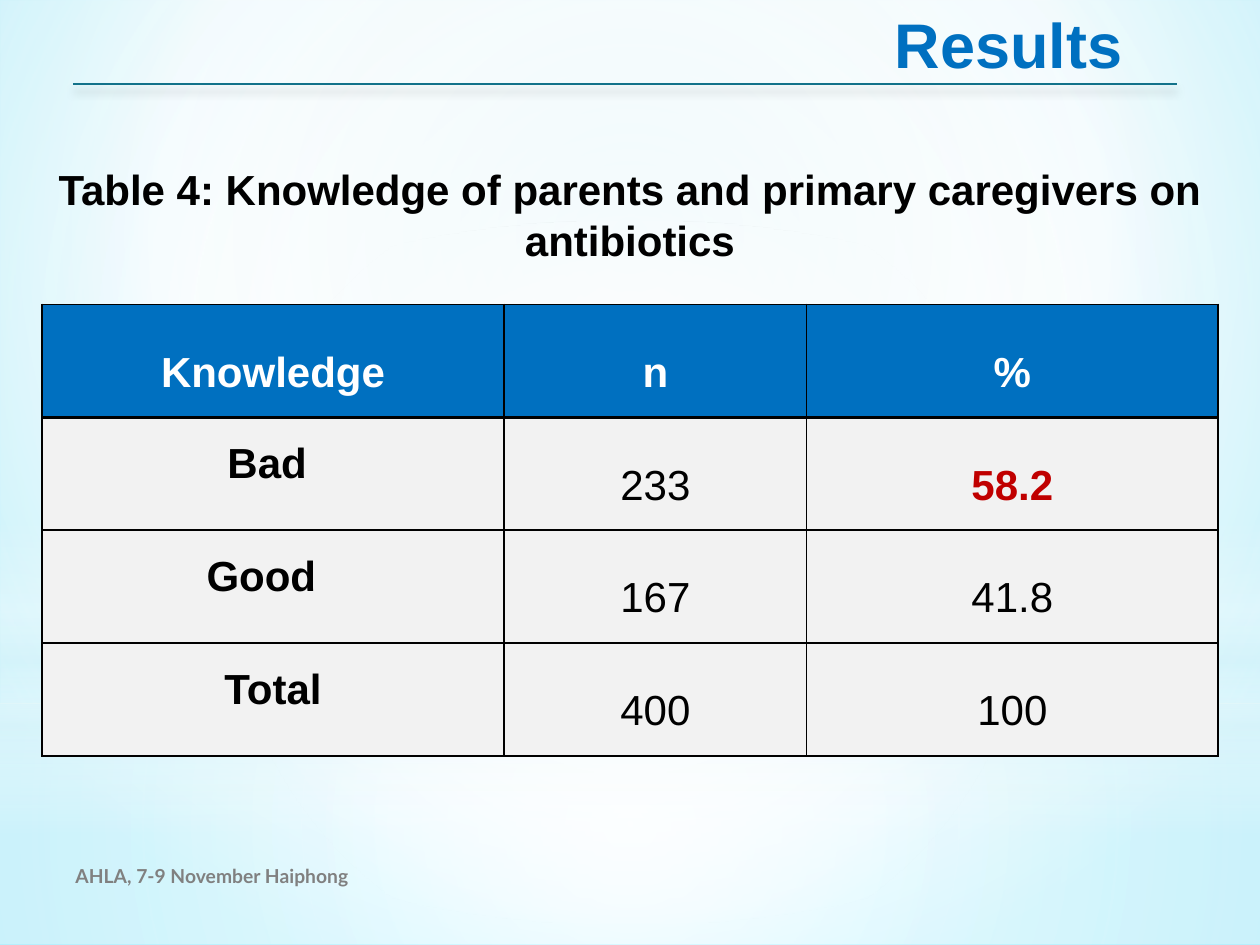
"""Build the results slide on knowledge of antibiotics."""
import pptx
import pptx.dml.color
import pptx.enum.shapes
import pptx.enum.text
import pptx.oxml
import pptx.oxml.ns
import pptx.util

Pt = pptx.util.Pt
RGB = pptx.dml.color.RGBColor
Shape = pptx.enum.shapes.MSO_SHAPE
Align = pptx.enum.text.PP_ALIGN
Anchor = pptx.enum.text.MSO_ANCHOR
qn = pptx.oxml.ns.qn
NS = pptx.oxml.ns.nsdecls("a")

BLUE = RGB(0x00, 0x70, 0xC0)
TEAL = RGB(0x12, 0x72, 0x8A)
RED = RGB(0xC0, 0x00, 0x00)
GREY = RGB(0x80, 0x80, 0x80)
PALE = RGB(0xF2, 0xF2, 0xF2)
BLACK = RGB(0x00, 0x00, 0x00)
WHITE = RGB(0xFF, 0xFF, 0xFF)
ICE = RGB(0xDE, 0xF5, 0xFA)
MIST = RGB(0xCD, 0xEF, 0xF7)
SKY = RGB(0x7C, 0xE7, 0xFF)
MID = (50, 50, 50, 50)


def write(frame, text, size=24, font="Arial", color=BLACK, bold=True,
          align=Align.CENTER, space=None):
    """Put one formatted paragraph into a text frame."""
    para = frame.paragraphs[0]
    para.alignment = align
    para.line_spacing = space
    run = para.add_run()
    run.text = text
    run.font.size = Pt(size)
    run.font.name = font
    run.font.bold = bold
    run.font.color.rgb = color


def blend(fill, root, stops, focus=None):
    """Fill with a gradient: round when a focus is given, else downward."""
    marks = "".join(
        f'<a:gs pos="{pos * 1000}"><a:srgbClr val="{color}">'
        f'<a:alpha val="{alpha * 1000}"/></a:srgbClr></a:gs>'
        for pos, color, alpha in stops)
    if focus:
        sides = " ".join(f'{side}="{val * 1000}"' for side, val in zip("ltrb", focus))
        shade = f'<a:path path="circle"><a:fillToRect {sides}/></a:path>'
    else:
        shade = '<a:lin ang="5400000" scaled="0"/>'
    fill.solid()
    old = root.find(".//" + qn("a:solidFill"))
    old.getparent().replace(old, pptx.oxml.parse_xml(
        f'<a:gradFill {NS} rotWithShape="1"><a:gsLst>{marks}</a:gsLst>{shade}</a:gradFill>'))


class Deck:
    """Hold the style and the current slide."""

    def __init__(self):
        self.pres = pptx.Presentation()
        self.pres.slide_width, self.pres.slide_height = Pt(720), Pt(540)
        self.slide = self.pres.slides.add_slide(self.pres.slide_layouts[5])
        self.shapes = self.slide.shapes

    def ground(self, stops, focus):
        """Paint the slide background."""
        blend(self.slide.background.fill, self.slide.element, stops, focus)

    def panel(self, kind, top, high, stops, focus=None):
        """Add a full-width translucent panel."""
        shape = self.shapes.add_shape(kind, 0, Pt(top), Pt(720), Pt(high))
        shape.shadow.inherit = False
        shape.line.fill.background()
        blend(shape.fill, shape.element, stops, focus)

    def title(self, text, left, top, wide, high, **style):
        """Place the title above the panels."""
        shape = self.shapes.title
        self.shapes.element.append(shape.element)
        shape.left, shape.top, shape.width, shape.height = map(Pt, (left, top, wide, high))
        shape.text_frame.word_wrap = False
        shape.text_frame.vertical_anchor = Anchor.TOP
        write(shape.text_frame, text, **style)

    def rule(self, left, right, top):
        """Draw a level line with a soft shadow."""
        line = self.shapes.add_connector(
            pptx.enum.shapes.MSO_CONNECTOR.STRAIGHT, Pt(left), Pt(top), Pt(right), Pt(top))
        line.line.color.rgb = TEAL
        line.line.width = Pt(1.25)
        line.element.spPr.append(pptx.oxml.parse_xml(
            f'<a:effectLst {NS}><a:outerShdw blurRad="{Pt(5)}" dist="{Pt(4)}" dir="5400000">'
            '<a:srgbClr val="000000"><a:alpha val="20000"/></a:srgbClr>'
            '</a:outerShdw></a:effectLst>'))

    def label(self, text, left, top, wide, high, anchor=Anchor.TOP, **style):
        """Add a wrapped text box."""
        frame = self.shapes.add_textbox(Pt(left), Pt(top), Pt(wide), Pt(high)).text_frame
        frame.word_wrap = True
        frame.vertical_anchor = anchor
        write(frame, text, **style)

    def cell(self, cell, text, fill, anchor, base=1, inset=5, **style):
        """Fill, frame and write one table cell."""
        cell.fill.solid()
        cell.fill.fore_color.rgb = fill
        cell.vertical_anchor = anchor
        cell.margin_left, cell.margin_right = Pt(5), Pt(inset)
        cell.margin_top = cell.margin_bottom = 0
        write(cell.text_frame, text, space=1.5, **style)
        props = cell._tc.get_or_add_tcPr()
        for spot, (side, width) in enumerate(zip("LRTB", (1, 1, 1, base))):
            props.insert(spot, pptx.oxml.parse_xml(
                f'<a:ln{side} {NS} w="{Pt(width)}"><a:solidFill>'
                f'<a:srgbClr val="{BLACK}"/></a:solidFill></a:ln{side}>'))

    def table(self, rows, left, top, cols, high, insets, hot):
        """Add the table with a header row and a bold first column."""
        grid = self.shapes.add_table(len(rows), len(cols), Pt(left), Pt(top),
                                     Pt(sum(cols)), Pt(high * len(rows))).table
        for col, wide in zip(grid.columns, cols):
            col.width = Pt(wide)
        for r, row in enumerate(rows):
            grid.rows[r].height = Pt(high)
            for c, text in enumerate(row):
                cell = grid.cell(r, c)
                if r == 0:
                    self.cell(cell, text, BLUE, Anchor.MIDDLE, base=2, color=WHITE)
                elif c == 0:
                    self.cell(cell, text, PALE, Anchor.TOP, inset=insets.get(text, 5))
                else:
                    self.cell(cell, text, PALE, Anchor.MIDDLE, bold=text == hot,
                              color=RED if text == hot else BLACK)


def main():
    """Build and save the slide."""
    deck = Deck()
    deck.ground([(0, MIST, 100), (60, WHITE, 100), (100, SKY, 100)], (20, 10, 20, 60))
    deck.panel(Shape.RECTANGLE, 402, 138,
               [(0, WHITE, 91), (37, WHITE, 76), (100, ICE, 79)], MID)
    deck.panel(Shape.RECTANGLE, 0, 402,
               [(0, WHITE, 89), (48, WHITE, 62), (100, ICE, 79)], MID)
    deck.panel(Shape.RECTANGLE, 297, 180,
               [(0, WHITE, 0), (29, WHITE, 30), (45, ICE, 40),
                (55, WHITE, 26), (65, ICE, 60), (100, WHITE, 0)])
    deck.panel(Shape.OVAL, 126, 402, [(0, WHITE, 100), (56, WHITE, 0)], MID)
    deck.rule(42, 672.5, 48)
    deck.title("Results", 504, -0.6, 146, 51, size=36, color=BLUE, align=Align.LEFT)
    deck.table([("Knowledge", "n", "%"), ("Bad", "233", "58.2"),
                ("Good", "167", "41.8"), ("Total", "400", "100")],
               24, 174, (264, 173, 235), 64.5, {"Bad": 11.7, "Good": 18.3}, "58.2")
    deck.label("Table 4: Knowledge of parents and primary caregivers on antibiotics",
               12, 90, 696, 65.5)
    deck.label("AHLA, 7-9 November Haiphong", 36, 486, 264, 28.8, Anchor.MIDDLE,
               size=11, font="Lato", color=GREY, align=Align.LEFT)
    deck.pres.save("out.pptx")


if __name__ == "__main__":
    main()
